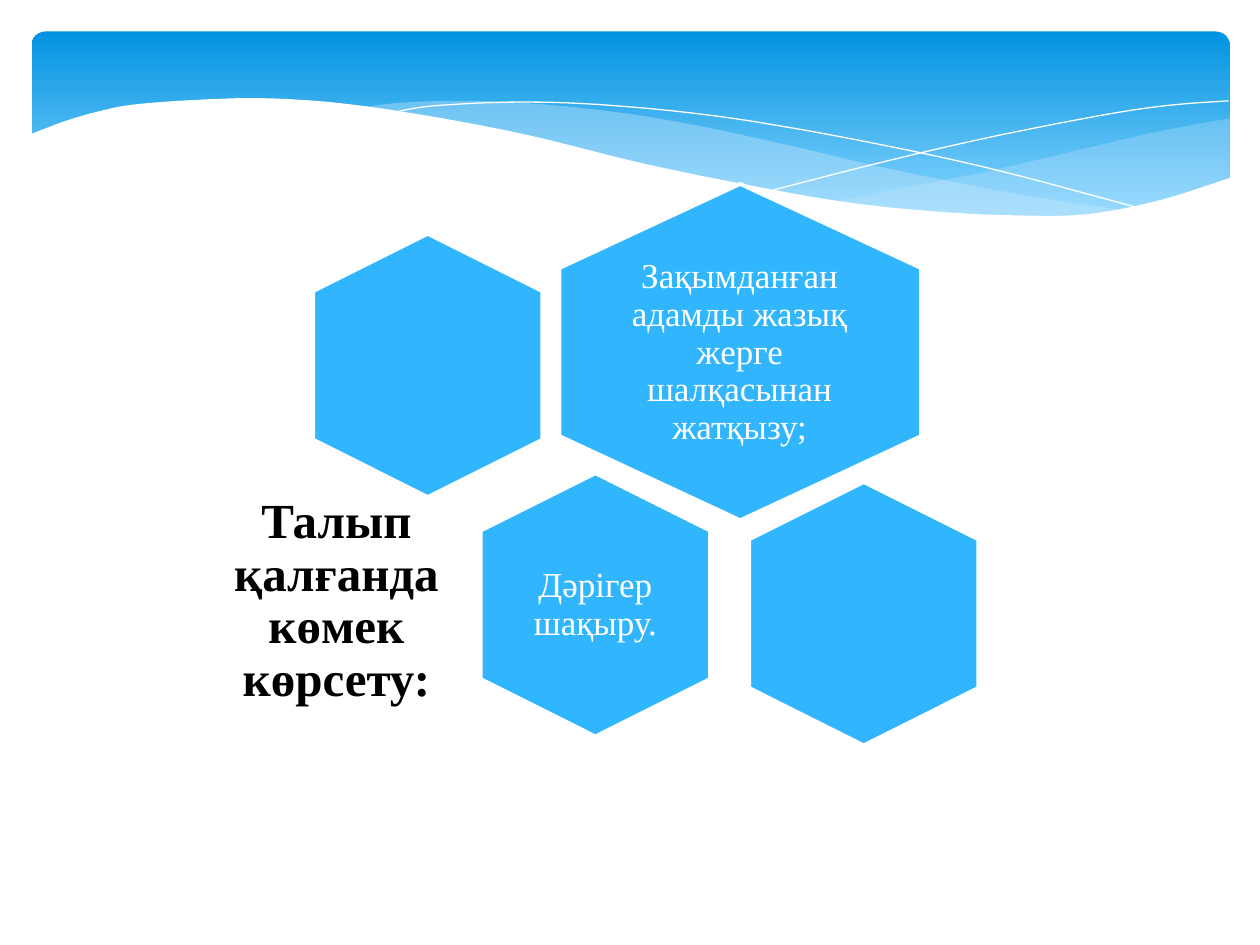
from lxml.etree import SubElement
from pptx import Presentation
from pptx.dml.color import RGBColor
from pptx.enum.shapes import MSO_SHAPE as SHAPE
from pptx.enum.text import MSO_ANCHOR as ANCHOR, MSO_AUTO_SIZE as AUTO_SIZE, PP_ALIGN as ALIGN
from pptx.oxml.ns import qn
from pptx.util import Inches, Pt

WHITE = RGBColor(0xFF, 0xFF, 0xFF)
BLACK = RGBColor(0x00, 0x00, 0x00)
SKY = RGBColor(0x31, 0xB6, 0xFD)
DEEP_BLUE = RGBColor(0x02, 0x93, 0xE0)
LIGHT_BLUE = RGBColor(0x83, 0xD3, 0xFE)
PALE_BLUE = RGBColor(0xC6, 0xE7, 0xFC)
FONT = "Times New Roman"

presentation = Presentation()
presentation.slide_width, presentation.slide_height = Inches(10), Inches(7.5)
COLUMN = presentation.slide_width // 1000
ROW = presentation.slide_height // 750
slide = presentation.slides.add_slide(presentation.slide_layouts[5])


def smooth_curve(knots, steps=6):
    padded = [knots[0], *knots, knots[-1]]
    points = [knots[0]]
    for before, start, end, after in zip(padded, padded[1:], padded[2:], padded[3:]):
        for step in range(1, steps + 1):
            t = step / steps
            points.append(tuple(
                (2 * b + (c - a) * t + (2 * a - 5 * b + 4 * c - d) * t**2
                 + (3 * b - a - 3 * c + d) * t**3) / 2
                for a, b, c, d in zip(before, start, end, after)))
    return points


def write_text(shape, text, size, color, margin, bold=False):
    frame = shape.text_frame
    frame.text = text
    frame.word_wrap = True
    frame.auto_size = AUTO_SIZE.NONE
    frame.vertical_anchor = ANCHOR.MIDDLE
    frame.margin_left = frame.margin_right = margin * COLUMN
    frame.margin_top = frame.margin_bottom = margin * ROW
    paragraph = frame.paragraphs[0]
    paragraph.alignment = ALIGN.CENTER
    paragraph.line_spacing = 0.9
    paragraph.font.name = FONT
    paragraph.font.size = Pt(size)
    paragraph.font.bold = bold
    paragraph.font.color.rgb = color


banner = slide.shapes.add_shape(
    SHAPE.ROUNDED_RECTANGLE, 25 * COLUMN, 25 * ROW, 951 * COLUMN, 156 * ROW)
banner.adjustments[0] = 0.071
banner.shadow.inherit = False
banner.line.fill.background()
banner.fill.gradient()
banner.fill.gradient_angle = 270
for stop, position, color in zip(banner.fill.gradient_stops, (0, 0.9), (DEEP_BLUE, LIGHT_BLUE)):
    stop.position = position
    stop.color.rgb = color

right_wave = (
    smooth_curve([(976, 94), (921, 104), (861, 118), (779, 137), (661, 160)])
    + smooth_curve([(661, 160), (732, 168), (803, 172), (863, 170), (921, 160), (976, 141)]))
middle_wave = (
    smooth_curve([(893, 167), (807, 154), (706, 134), (629, 116), (555, 100),
                  (489, 89), (420, 82), (361, 80), (313, 82), (286, 86)])
    + smooth_curve([(286, 86), (362, 97), (449, 116), (566, 143), (650, 158),
                    (736, 169), (807, 173), (857, 171), (893, 167)]))
falling_line = smooth_curve([(309, 90), (344, 84), (416, 81), (489, 84), (582, 94),
                             (695, 114), (795, 136), (907, 166)])
rising_line = smooth_curve([(613, 151), (695, 130), (776, 111), (866, 93), (924, 84), (975, 80)])
white_wave = smooth_curve([
    (977, 141), (920, 159), (863, 170), (809, 171), (744, 168), (668, 160),
    (579, 144), (503, 128), (418, 107), (340, 92), (271, 82), (211, 78),
    (161, 79), (106, 83), (76, 89), (52, 96), (36, 102), (23, 107),
]) + [(23, 224), (977, 224)]

for points, color, opacity in (
    (right_wave, PALE_BLUE, 29),
    (middle_wave, PALE_BLUE, 40),
    (falling_line, None, None),
    (rising_line, None, None),
    (white_wave, WHITE, 100),
):
    fine_points = [(round(x * 10), round(y * 10)) for x, y in points]
    builder = slide.shapes.build_freeform(*fine_points[0], scale=(COLUMN / 10, ROW / 10))
    builder.add_line_segments(fine_points[1:], close=color is not None)
    wave = builder.convert_to_shape()
    wave.shadow.inherit = False
    if color is None:
        wave.fill.background()
        wave.line.color.rgb = WHITE
        wave.line.width = Pt(0)
        continue
    wave.line.fill.background()
    wave.fill.solid()
    wave.fill.fore_color.rgb = color
    if opacity < 100:
        color_element = next(wave.element.spPr.iter(qn("a:srgbClr")))
        SubElement(color_element, qn("a:alpha")).set("val", str(opacity * 1000))

SMALL = (209, 182)
for left, top, (width, height) in (
    (454, 136, (267, 287)),
    (235, 199, SMALL),
    (368, 389, SMALL),
    (581, 396, SMALL),
):
    hexagon = slide.shapes.add_shape(
        SHAPE.HEXAGON, left * COLUMN, top * ROW, width * COLUMN, height * ROW)
    hexagon.rotation = 90
    hexagon.adjustments[0] = 0.25
    hexagon.shadow.inherit = False
    hexagon.fill.solid()
    hexagon.fill.fore_color.rgb = SKY
    hexagon.line.color.rgb = WHITE
    hexagon.line.width = Pt(2.25)

for text, left, top, width, height in (
    ("Зақымданған адамды жазық жерге шалқасынан жатқызу;", 491, 191, 192, 178),
    ("Дәрігер шақыру.", 410, 408, 125, 144),
):
    label = slide.shapes.add_textbox(left * COLUMN, top * ROW, width * COLUMN, height * ROW)
    write_text(label, text, 20, WHITE, 8)

title = slide.shapes.title
title.left, title.top = 154 * COLUMN, 391 * ROW
title.width, title.height = 226 * COLUMN, 173 * ROW
write_text(title, "Талып қалғанда көмек көрсету:", 28, BLACK, 12, bold=True)

presentation.save("out.pptx")
